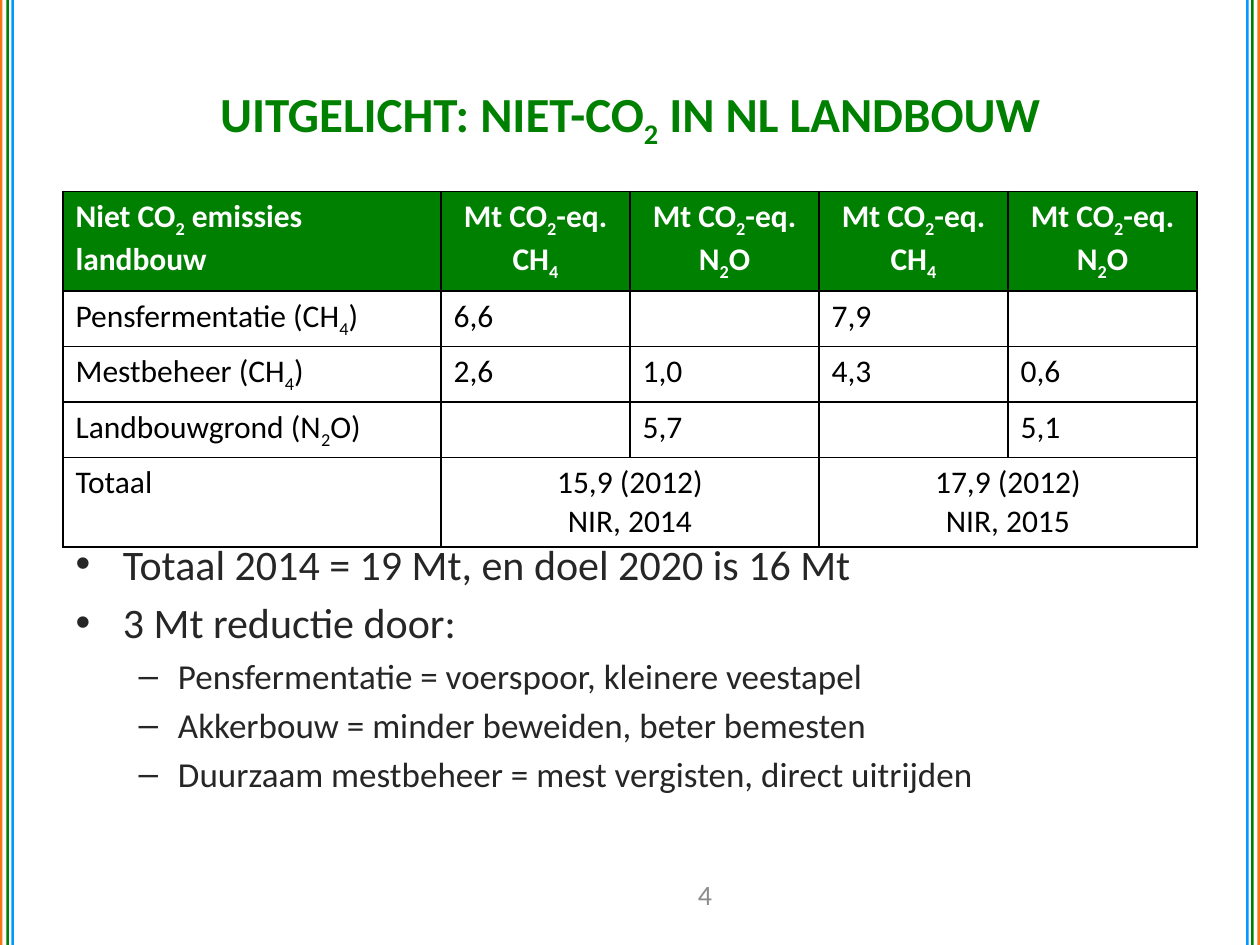
"""Build a slide on non-CO2 emissions in Dutch agriculture."""
import lxml.etree
import pptx
import pptx.dml.color
import pptx.enum.shapes
import pptx.enum.text
import pptx.oxml.ns
import pptx.util

Inches = pptx.util.Inches
Align = pptx.enum.text.PP_ALIGN
Anchor = pptx.enum.text.MSO_ANCHOR

GREEN, BLACK, WHITE = "008000", "000000", "FFFFFF"
STRIPES = [(0, "F67616"), (0.05, GREEN), (0.09, "0099FF")]
METHANE = "Mt CO~2~-eq.\nCH~4~"
NITROUS = "Mt CO~2~-eq.\nN~2~O"
EMISSIONS = [
    ["Niet CO~2~ emissies landbouw", METHANE, NITROUS, METHANE, NITROUS],
    ["Pensfermentatie (CH~4~)", "6,6", "", "7,9", ""],
    ["Mestbeheer (CH~4~)", "2,6", "1,0", "4,3", "0,6"],
    ["Landbouwgrond (N~2~O)", "", "5,7", "", "5,1"],
    ["Totaal", "15,9 (2012)\nNIR, 2014", None, "17,9 (2012)\nNIR, 2015", None],
]
POINTS = [
    (0, "Totaal 2014 = 19 Mt, en doel 2020 is 16 Mt"),
    (0, "3 Mt reductie door:"),
    (1, "Pensfermentatie = voerspoor, kleinere veestapel"),
    (1, "Akkerbouw = minder beweiden, beter bemesten"),
    (1, "Duurzaam mestbeheer = mest vergisten, direct uitrijden"),
]


def color(value):
    """Turn a hex string into a colour."""
    return pptx.dml.color.RGBColor.from_string(value)


def write_text(para, text, size=18, fill=BLACK, bold=False, align=None):
    """Write text into a paragraph, with subscripts between tildes."""
    para.alignment = align
    para.font.size = pptx.util.Pt(size)
    for index, piece in enumerate(text.split("~")):
        if piece:
            span = para.add_run()
            span.text = piece
            span.font.name = "Calibri"
            span.font.size = pptx.util.Pt(size)
            span.font.bold = bold
            span.font.color.rgb = color(fill)
            if index % 2:
                span.font._element.set("baseline", "-25000")


def draw_borders(cell, fill=BLACK, width=1):
    """Draw a solid line on all four sides of a cell."""
    properties = cell._tc.get_or_add_tcPr()
    qn = pptx.oxml.ns.qn
    for side in ("a:lnL", "a:lnR", "a:lnT", "a:lnB"):
        line = lxml.etree.SubElement(properties, qn(side), w=str(pptx.util.Pt(width)))
        solid = lxml.etree.SubElement(line, qn("a:solidFill"))
        lxml.etree.SubElement(solid, qn("a:srgbClr"), val=fill)


class Painter:
    """Hold the style and the current slide."""

    def __init__(self, page):
        """Keep the page to draw on."""
        self.page = page

    def place(self, box, left, top, width, height):
        """Move and size a box."""
        box.left, box.top = Inches(left), Inches(top)
        box.width, box.height = Inches(width), Inches(height)

    def stripe(self, left, fill, width=0.02):
        """Draw a full-height vertical stripe."""
        bar = self.page.shapes.add_shape(
            pptx.enum.shapes.MSO_SHAPE.RECTANGLE,
            Inches(left), 0, Inches(width), Inches(7.5))
        bar.shadow.inherit = False
        bar.fill.solid()
        bar.fill.fore_color.rgb = color(fill)
        bar.line.fill.background()

    def title(self, text):
        """Fill the title placeholder."""
        box = self.page.shapes.title
        self.place(box, 0.5, 0.3, 9, 1.25)
        box.text_frame.vertical_anchor = Anchor.MIDDLE
        write_text(box.text_frame.paragraphs[0], text, size=28, fill=GREEN,
                   bold=True, align=Align.CENTER)

    def table(self, rows, widths, heights):
        """Draw a table; a cell of None joins the cell to its left."""
        frame = self.page.shapes.add_table(
            len(rows), len(widths), Inches(0.5), Inches(1.52),
            Inches(sum(widths)), Inches(sum(heights)))
        table = frame.table
        table.first_row = table.horz_banding = False
        for column, width in zip(table.columns, widths):
            column.width = Inches(width)
        for number, (row, height) in enumerate(zip(rows, heights)):
            table.rows[number].height = Inches(height)
            for position, text in enumerate(row):
                cell = table.cell(number, position)
                self.cell(cell, text or "", header=number == 0)
                if text is None:
                    table.cell(number, position - 1).merge(cell)

    def cell(self, cell, text, header):
        """Fill and format one table cell."""
        draw_borders(cell)
        if header:
            cell.fill.solid()
            cell.fill.fore_color.rgb = color(GREEN)
        else:
            cell.fill.background()
        lines = text.split("\n")
        for index, line in enumerate(lines):
            frame = cell.text_frame
            para = frame.add_paragraph() if index else frame.paragraphs[0]
            write_text(para, line, fill=WHITE if header else BLACK, bold=header,
                       align=Align.CENTER if len(lines) > 1 else Align.LEFT)

    def bullets(self, points):
        """Fill the body placeholder with a two-level list."""
        box = self.page.placeholders[1]
        self.place(box, 0.5, 4.22, 9, 2.28)
        frame = box.text_frame
        frame.auto_size = pptx.enum.text.MSO_AUTO_SIZE.NONE
        for index, (level, text) in enumerate(points):
            para = frame.add_paragraph() if index else frame.paragraphs[0]
            para.level = level
            write_text(para, text, size=20 if level else 24, fill="262626")
        frame.paragraphs[0].space_before = pptx.util.Pt(0)

    def page_number(self, text):
        """Write the page number at the foot."""
        box = self.page.shapes.add_textbox(
            Inches(5.16), Inches(6.9), Inches(0.87), Inches(0.4))
        box.text_frame.word_wrap = True
        box.text_frame.vertical_anchor = Anchor.MIDDLE
        write_text(box.text_frame.paragraphs[0], text, size=16, fill="8C8C8C",
                   align=Align.CENTER)


def main():
    """Build and save the deck."""
    deck = pptx.Presentation()
    deck.slide_width, deck.slide_height = Inches(10), Inches(7.5)
    painter = Painter(deck.slides.add_slide(deck.slide_layouts[1]))
    for offset, fill in STRIPES:
        painter.stripe(offset, fill)
        painter.stripe(9.98 - offset, fill)
    painter.table(EMISSIONS, [3] + [1.5] * 4, [0.79] + [0.44] * 3 + [0.71])
    painter.page_number("4")
    painter.title("UITGELICHT: NIET-CO~2~ IN NL LANDBOUW")
    painter.bullets(POINTS)
    deck.save("out.pptx")


if __name__ == "__main__":
    main()
